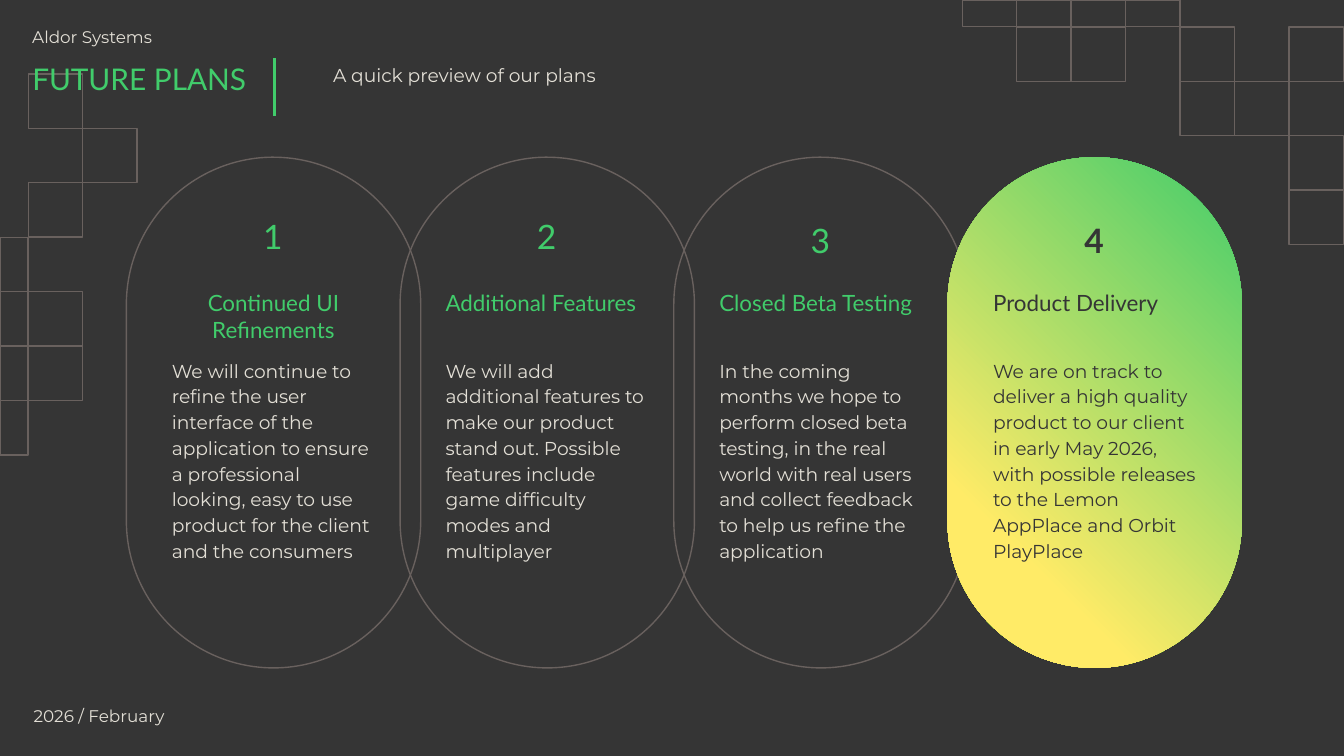
from pptx import Presentation
from pptx.util import Inches, Pt
from pptx.dml.color import RGBColor as RGB
from pptx.enum.shapes import MSO_SHAPE as SHAPE, MSO_CONNECTOR as LINE
from pptx.enum.text import MSO_ANCHOR as ANCHOR, MSO_AUTO_SIZE as FIT, PP_ALIGN as ALIGN
from pptx.oxml.ns import qn
from lxml import etree

THEME = {
    "dark": RGB.from_string("353535"),
    "green": RGB.from_string("41CC6B"),
    "yellow": RGB.from_string("FFEB67"),
    "cream": RGB.from_string("E3DFD6"),
    "grey": RGB.from_string("69615E"),
    "head": "Lato",
    "body": "Montserrat",
    "title": 16,
    "number": 18,
    "topic": 12,
    "text": 10,
    "small": 9,
}

TITLE = "FUTURE PLANS"
TAGLINE = "A quick preview of our plans"
FIRM = "Aldor Systems"
DATE = "2026 / February"

PLANS = [
    ("1", 1.51, "Continued UI Refinements", ALIGN.CENTER,
     "We will continue to refine the user interface of the application to ensure "
     "a professional looking, easy to use product for the client and the consumers"),
    ("2", 1.51, "Additional Features", ALIGN.LEFT,
     "We will add additional features to make our product stand out. Possible "
     "features include game difficulty modes and multiplayer"),
    ("3", 1.54, "Closed Beta Testing", ALIGN.LEFT,
     "In the coming months we hope to perform closed beta testing, in the real "
     "world with real users and collect feedback to help us refine the application"),
    ("4", 1.54, "Product Delivery", ALIGN.LEFT,
     "We are on track to deliver a high quality product to our client in early "
     "May 2026, with possible releases to the Lemon AppPlace and Orbit PlayPlace"),
]

CELL = 0.81 / 2
GRIDS = [
    (0.21, 0.55, [(0, 0), (1, 1), (0, 2), (-1, 3), (-1, 4), (0, 4),
                  (-1, 5), (0, 5), (-1, 6)]),
    (7.16, 0.2, [(0, -1), (1, -1), (2, -1), (3, -1), (1, 0), (2, 0), (4, 0),
                 (6, 0), (4, 1), (5, 1), (6, 2), (6, 3)]),
]

WIDE = 10
CARD_X, CARD_Y, CARD_W, CARD_H = 0.94, 1.17, 2.19, 3.8
PITCH = (7.05 - CARD_X) / 3

deck = Presentation()
deck.slide_width, deck.slide_height = Inches(WIDE), Inches(WIDE * 9 / 16)
slide = deck.slides.add_slide(deck.slide_layouts[5])
slide.background.fill.solid()
slide.background.fill.fore_color.rgb = THEME["dark"]
shapes = slide.shapes


def outline(kind, x, y, w, h):
    shape = shapes.add_shape(kind, Inches(x), Inches(y), Inches(w), Inches(h))
    shape.shadow.inherit = False
    shape.fill.background()
    shape.line.color.rgb = THEME["grey"]
    shape.line.width = Pt(0.75)
    return shape


def write(box, text, size, face, tone, align=ALIGN.LEFT, bold=False,
          space=1.0, inset=(0.1, 0.1, 0.1, 0.1), anchor=ANCHOR.TOP):
    frame = box.text_frame
    frame.text = text
    frame.word_wrap = True
    frame.auto_size = FIT.NONE
    frame.vertical_anchor = anchor
    (frame.margin_left, frame.margin_top,
     frame.margin_right, frame.margin_bottom) = map(Inches, inset)
    para = frame.paragraphs[0]
    para.alignment = align
    para.line_spacing = space
    font = para.runs[0].font
    font.size, font.name, font.bold = Pt(THEME[size]), THEME[face], bold
    font.color.rgb = THEME[tone]


def label(x, y, w, h, *args, **style):
    box = shapes.add_textbox(Inches(x), Inches(y), Inches(w), Inches(h))
    write(box, *args, **style)


for left, top, cells in GRIDS:
    for col, row in cells:
        x, y = left + col * CELL, top + row * CELL
        near, high = max(x, 0), max(y, 0)
        outline(SHAPE.RECTANGLE, near, high, x + CELL - near, y + CELL - high)

rule = shapes.add_connector(LINE.STRAIGHT, Inches(2.04), Inches(0.43),
                            Inches(2.04), Inches(0.86))
rule.line.color.rgb = THEME["green"]
rule.line.width = Pt(1.5)
etree.SubElement(rule._element.spPr, qn("a:effectLst"))

title = shapes.title
title.left, title.top = Inches(0.04), Inches(0.35)
title.width, title.height = Inches(1.99), Inches(0.57)
INDENT = (0.2, 0.1, 0.1, 0.1)
write(title, TITLE, "title", "head", "green", inset=INDENT)
shapes._spTree.append(title._element)

label(2.38, 0.35, 4.27, 0.57, TAGLINE, "text", "body", "cream", space=1.15)
label(0.04, 0.1, 1.73, 0.21, FIRM, "small", "body", "cream", inset=INDENT)
label(0.25, 5.22, 2.12, 0.21, DATE, "small", "body", "cream",
      inset=(0, 0, 0, 0), anchor=ANCHOR.MIDDLE)

for i, (number, num_y, topic, align, text) in enumerate(PLANS):
    x = CARD_X + i * PITCH
    last = i == len(PLANS) - 1
    card = outline(SHAPE.ROUNDED_RECTANGLE, x, CARD_Y, CARD_W, CARD_H)
    card.adjustments[0] = 0.5
    if last:
        card.line.fill.background()
        card.fill.gradient()
        card.fill.gradient_angle = 225
        start, end = card.fill.gradient_stops
        start.color.rgb, start.position = THEME["green"], 0
        end.color.rgb, end.position = THEME["yellow"], 0.77
    accent = "dark" if last else "green"
    label(x + 0.83, num_y, 0.52, 0.43, number, "number", "head", accent,
          align=ALIGN.CENTER, bold=last)
    label(x + 0.24, 2.05, 1.71, 0.5, topic, "topic", "head", accent,
          align=align)
    label(x + 0.24, 2.55, 1.71, 1.8, text, "text", "body",
          "dark" if last else "cream", space=1.15)

deck.save("out.pptx")
